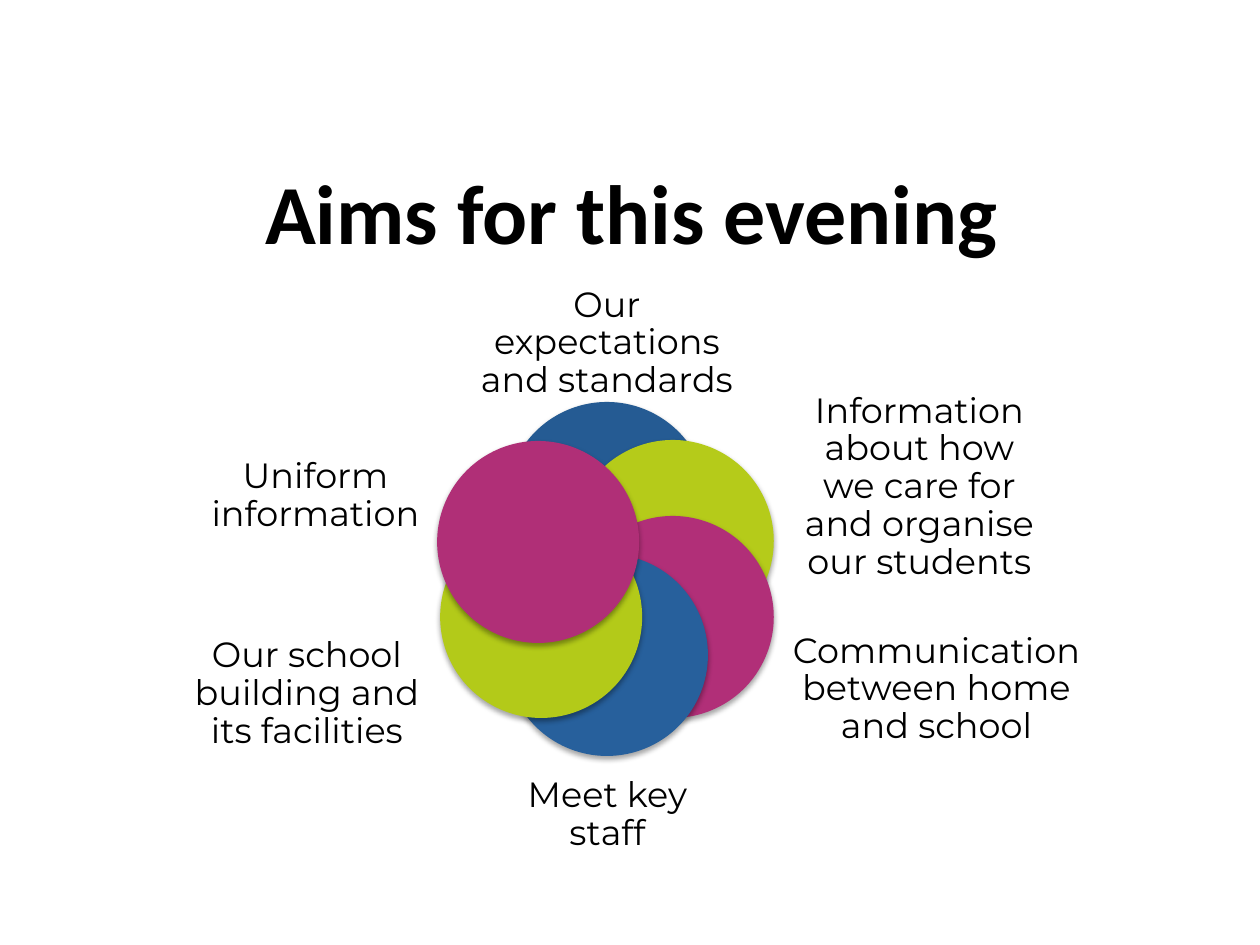
import math

import pptx
import pptx.dml.color
import pptx.enum.shapes
import pptx.enum.text
import pptx.util
from lxml import etree
from pptx.oxml.ns import qn

# Content: text, label box (left, top, width, height), circle colour, circle nudge
TITLE = "Aims for this evening"
AIMS = [
    ("Our expectations and standards", (477, 275, 260, 137), "top blue", (0, 0)),
    ("Information about how we care for and organise our students",
     (800, 412, 239, 151), "lime", (0, 0)),
    ("Communication between home and school", (769, 605, 335, 169), "magenta", (0, 0)),
    ("Meet key staff", (488, 731, 239, 169), "blue", (0, 0)),
    ("Our school building and its facilities", (179, 626, 256, 137), "dark lime", (0, 0)),
    ("Uniform\ninformation", (196, 412, 239, 169), "dark magenta", (-3, 1)),
]
COLOURS = {
    "text": "000000", "shadow": "000000",
    "top blue": "255B93", "blue": "27609C",
    "lime": "B5CB1A", "dark lime": "B3CA19",
    "magenta": "B12F78", "dark magenta": "B02F77",
}
TITLE_BOX = (249, 154, 765, 115)
RING_CENTRE = (607, 579)
RING_RADIUS = 76
CIRCLE_SIZE = 202
EMU_PER_PX = 914400 / 126


def px(*lengths):
    return [round(length * EMU_PER_PX) for length in lengths]


def colour(name):
    return pptx.dml.color.RGBColor.from_string(COLOURS[name])


def style(paragraph, font_name, size, bold=False):
    paragraph.alignment = pptx.enum.text.PP_ALIGN.CENTER
    for run in paragraph.runs:
        run.font.name = font_name
        run.font.size = pptx.util.Pt(size)
        run.font.bold = bold
        run.font.color.rgb = colour("text")


def add_shadow(shape):
    shape.shadow.inherit = False
    effects = shape.element.spPr.find(qn("a:effectLst"))
    shadow = etree.SubElement(
        effects, qn("a:outerShdw"), blurRad=str(pptx.util.Pt(3.1)),
        dist=str(pptx.util.Pt(1.8)), dir="5400000", rotWithShape="0")
    tint = etree.SubElement(shadow, qn("a:srgbClr"), val=COLOURS["shadow"])
    etree.SubElement(tint, qn("a:alpha"), val="35000")


def add_circle(slide, index, fill, nudge):
    angle = math.radians(60 * index - 90)
    left = RING_CENTRE[0] + RING_RADIUS * math.cos(angle) - CIRCLE_SIZE / 2 + nudge[0]
    top = RING_CENTRE[1] + RING_RADIUS * math.sin(angle) - CIRCLE_SIZE / 2 + nudge[1]
    circle = slide.shapes.add_shape(
        pptx.enum.shapes.MSO_SHAPE.OVAL, *px(left, top, CIRCLE_SIZE, CIRCLE_SIZE))
    circle.fill.solid()
    circle.fill.fore_color.rgb = colour(fill)
    circle.line.fill.background()
    add_shadow(circle)


def add_label(slide, text, box):
    frame = slide.shapes.add_textbox(*px(*box)).text_frame
    frame.word_wrap = True
    frame.vertical_anchor = pptx.enum.text.MSO_ANCHOR.MIDDLE
    frame.margin_left = frame.margin_right = frame.margin_top = frame.margin_bottom = 0
    frame.text = text
    for paragraph in frame.paragraphs:
        paragraph.line_spacing = 0.9
        style(paragraph, "Montserrat", 20)


def main():
    deck = pptx.Presentation()
    deck.slide_width, deck.slide_height = px(1260, 945)
    slide = deck.slides.add_slide(deck.slide_layouts[5])

    # Title
    title = slide.shapes.title
    title.left, title.top, title.width, title.height = px(*TITLE_BOX)
    title.text_frame.text = TITLE
    title.text_frame.word_wrap = False
    title.text_frame.auto_size = pptx.enum.text.MSO_AUTO_SIZE.SHAPE_TO_FIT_TEXT
    title.text_frame.vertical_anchor = pptx.enum.text.MSO_ANCHOR.TOP
    style(title.text_frame.paragraphs[0], "Calibri", 48, bold=True)

    # Ring of overlapping circles, clockwise from the top, each with its label
    for index, (text, box, fill, nudge) in enumerate(AIMS):
        add_circle(slide, index, fill, nudge)
        add_label(slide, text, box)

    deck.save("out.pptx")


if __name__ == "__main__":
    main()
